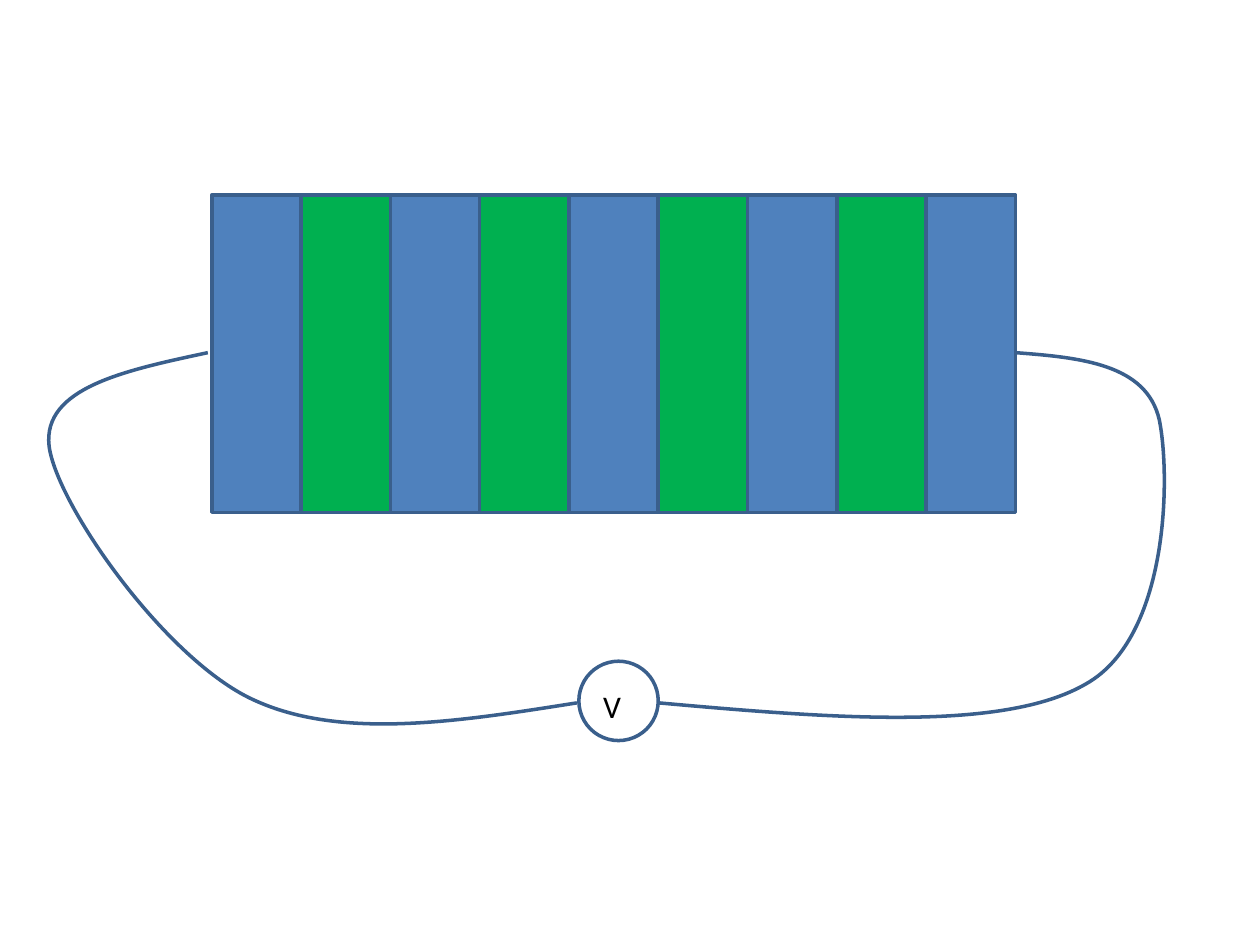
import lxml.etree
import pptx
import pptx.dml.color
import pptx.enum.shapes
import pptx.oxml.ns
import pptx.util

Cm = pptx.util.Cm
qn = pptx.oxml.ns.qn
SHAPES = pptx.enum.shapes.MSO_SHAPE

BLUE, GREEN, OUTLINE, BLACK = "4F81BD", "00B050", "3A5F8C", "000000"

# All lengths are in centimetres.
LAYERS = [BLUE, GREEN, BLUE, GREEN, BLUE, GREEN, BLUE, GREEN, BLUE]
STACK_LEFT, STACK_TOP, LAYER_WIDTH, LAYER_HEIGHT = 4.27, 3.93, 1.8, 6.4
METER = (11.67, 13.33, 1.6, 1.6)
METER_LABEL = ("V", (11.91, 13.72, 1.6, 1.02))

# Each wire has a bounding box and a chain of cubic Bézier curves:
# a start, then three points per curve.
WIRES = [
    ((0.99, 7.11, 10.64, 7.49),
     [(11.63, 14.17),
      (9.22, 14.55), (6.81, 14.94), (5.03, 14.07),
      (3.28, 13.21), (1.14, 10.16), (0.99, 8.99),
      (0.86, 7.82), (2.51, 7.47), (4.19, 7.11)]),
    ((13.28, 7.11, 10.19, 7.49),
     [(13.28, 14.17),
      (16.74, 14.48), (20.22, 14.76), (21.89, 13.79),
      (23.57, 12.85), (23.6, 9.58), (23.37, 8.46),
      (23.11, 7.34), (21.79, 7.21), (20.47, 7.11)]),
]


def rgb(value):
    return pptx.dml.color.RGBColor.from_string(value)


def style(shape, fill=None):
    """Outline the shape and fill it, or leave it hollow."""
    shape.shadow.inherit = False
    shape.line.color.rgb = rgb(OUTLINE)
    shape.line.width = pptx.util.Pt(2)
    if fill:
        shape.fill.solid()
        shape.fill.fore_color.rgb = rgb(fill)
    else:
        shape.fill.background()


def add_shape(slide, kind, box, fill=None):
    style(slide.shapes.add_shape(kind, *map(Cm, box)), fill)


def add_wire(slide, box, points):
    """Span the box with a freeform, then give its outline real Bézier curves."""
    left, top, width, height = box
    builder = slide.shapes.build_freeform(Cm(left), Cm(top))
    builder.add_line_segments([(Cm(left + width), Cm(top + height))], close=False)
    shape = builder.convert_to_shape()
    style(shape)

    outline = next(shape.element.iter(qn("a:path")))
    for command in list(outline):
        outline.remove(command)
    commands = [("a:moveTo", points[:1])]
    commands += [("a:cubicBezTo", points[i:i + 3]) for i in range(1, len(points), 3)]
    for tag, command_points in commands:
        command = lxml.etree.SubElement(outline, qn(tag))
        for x, y in command_points:
            lxml.etree.SubElement(command, qn("a:pt"),
                                  x=str(int(Cm(x - left))), y=str(int(Cm(y - top))))


def add_label(slide, text, box):
    text_frame = slide.shapes.add_textbox(*map(Cm, box)).text_frame
    text_frame.word_wrap = True
    text_frame.text = text
    font = text_frame.paragraphs[0].runs[0].font
    font.name = "Calibri"
    font.size = pptx.util.Pt(18)
    font.color.rgb = rgb(BLACK)


def main():
    presentation = pptx.Presentation()
    presentation.slide_width, presentation.slide_height = Cm(25.4), Cm(19.05)
    slide = presentation.slides.add_slide(presentation.slide_layouts[6])

    for index, color in enumerate(LAYERS):
        left = STACK_LEFT + index * LAYER_WIDTH
        add_shape(slide, SHAPES.RECTANGLE, (left, STACK_TOP, LAYER_WIDTH, LAYER_HEIGHT), color)
    add_shape(slide, SHAPES.OVAL, METER)
    add_label(slide, *METER_LABEL)
    for box, points in WIRES:
        add_wire(slide, box, points)

    presentation.save("out.pptx")


if __name__ == "__main__":
    main()
